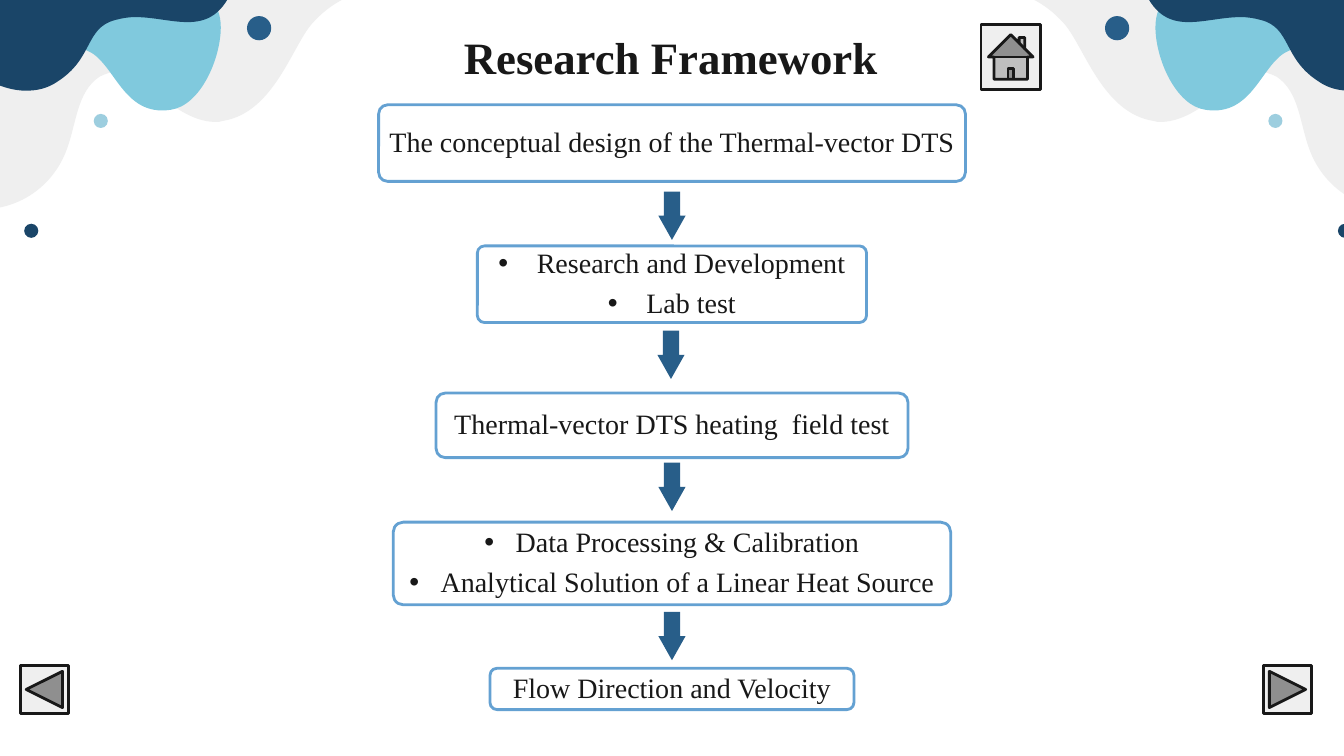
from dataclasses import dataclass

from lxml import etree
from pptx import Presentation
from pptx import util as u
from pptx.dml.color import RGBColor
from pptx.enum import shapes, text
from pptx.oxml.ns import qn


@dataclass(frozen=True)
class Theme:
    font: str = "Times New Roman"
    ink: str = "181818"
    white: str = "FFFFFF"
    border: str = "64A1D2"
    blue: str = "285E89"
    navy: str = "1A4568"
    aqua: str = "80C9DD"
    pale_blue: str = "9DCEDF"
    gray: str = "EFEFEF"
    title_size: int = 32
    body_size: int = 20
    line_width: int = 2


THEME = Theme()
PRESET = shapes.MSO_SHAPE
WIDTH, HEIGHT = 13.33, 7.5
CENTER = WIDTH / 2
MIRROR = 13.65

TITLE = "Research Framework"
STEPS = [
    {"top": 1.04, "width": 5.82, "height": 0.76, "radius": 0.09, "indent": 0,
     "lines": ["The conceptual design of the Thermal-vector DTS"]},
    {"top": 2.44, "width": 3.86, "height": 0.76, "radius": 0.07, "indent": 0.38,
     "lines": ["Research and Development", "Lab test"]},
    {"top": 3.9, "width": 4.68, "height": 0.64, "radius": 0.09, "indent": 0,
     "lines": ["Thermal-vector DTS heating  field test"]},
    {"top": 5.18, "width": 5.53, "height": 0.82, "radius": 0.1, "indent": 0.31,
     "lines": ["Data Processing & Calibration", "Analytical Solution of a Linear Heat Source"]},
    {"top": 6.63, "width": 3.61, "height": 0.41, "radius": 0.07, "indent": 0,
     "lines": ["Flow Direction and Velocity"]},
]
ARROWS = [(6.53, 1.9), (6.52, 3.28), (6.53, 4.59), (6.53, 6.07)]
ARROW_WIDTH, ARROW_HEIGHT = 0.27, 0.48
BUTTONS = [
    (PRESET.ACTION_BUTTON_FORWARD_OR_NEXT, 12.53, 6.6, 0.48, 0.48),
    (PRESET.ACTION_BUTTON_BACK_OR_PREVIOUS, 0.2, 6.6, 0.48, 0.48),
    (PRESET.ACTION_BUTTON_HOME, 9.73, 0.24, 0.59, 0.65),
]
WAVES = [
    (THEME.gray, (3.39, -0.17), [
        (3.57, -0.17, 3.72, -0.16, 3.71, -0.12), (3.7, -0.08, 3.46, -0.04, 3.41, -0.01),
        (3.29, 0.05, 3.19, 0.13, 3.1, 0.23), (2.9, 0.45, 2.72, 1.12, 2.21, 1.2),
        (2.19, 1.21, 2.16, 1.21, 2.14, 1.21), (1.8, 1.21, 1.5, 0.85, 1.37, 0.77),
        (1.31, 0.73, 1.24, 0.71, 1.18, 0.71), (1.11, 0.71, 1.05, 0.73, 0.99, 0.76),
        (0.76, 0.91, 0.76, 1.23, 0.66, 1.49), (0.54, 1.81, 0.26, 2.03, -0.07, 2.07),
        (-0.05, 1.38, -0.09, 0.69, -0.19, 0.01), (0.24, -0.06, 0.69, -0.08, 1.12, -0.09),
        (1.73, -0.11, 2.34, -0.14, 2.94, -0.15), (2.99, -0.16, 3.2, -0.17, 3.39, -0.17)]),
    (THEME.aqua, (0.01, 0.29), [
        (0.01, 0.36, 0.04, 0.43, 0.12, 0.49), (0.31, 0.63, 0.61, 0.41, 0.86, 0.5),
        (1.14, 0.61, 1.21, 1.16, 1.69, 1.09), (1.99, 1.05, 2.19, 0.58, 2.19, 0.27),
        (2.19, 0.21, 2.18, 0.15, 2.16, 0.1), (2.15, 0.09, 1.82, 0.01, 1.78, 0.01),
        (1.41, -0.02, 1.04, -0.02, 0.67, 0.02), (0.5, 0.03, 0.32, 0.05, 0.14, 0.07),
        (0.1, 0.08, 0.12, 0.08, 0.08, 0.12), (0.05, 0.14, 0.01, 0.21, 0.01, 0.29)]),
    (THEME.navy, (0.26, 0.9), [
        (0.01, 0.9, -0.19, 0.75, -0.19, 0.75), (-0.19, -0.17), (2.33, -0.17),
        (2.22, 0.15, 2.05, 0.22, 1.86, 0.22), (1.7, 0.22, 1.52, 0.17, 1.34, 0.17),
        (1.28, 0.17, 1.21, 0.18, 1.14, 0.2), (0.84, 0.28, 0.93, 0.58, 0.57, 0.81),
        (0.47, 0.88, 0.36, 0.9, 0.26, 0.9)]),
]
DOTS = [
    (THEME.blue, 2.45, 0.16, 0.24),
    (THEME.pale_blue, 0.93, 1.13, 0.14),
    (THEME.navy, 0.24, 2.22, 0.14),
]


def apply_format(target, values):
    for name, value in values.items():
        setattr(target, name, value)


def paint(shape, fill, line=None):
    shape.shadow.inherit = False
    shape.fill.solid()
    shape.fill.fore_color.rgb = RGBColor.from_string(fill)
    if line:
        shape.line.color.rgb = RGBColor.from_string(line)
        shape.line.width = u.Pt(THEME.line_width)
    else:
        shape.line.fill.background()


def add_preset(parent, preset, box, fill, line=None):
    shape = parent.shapes.add_shape(preset, *map(u.Inches, box))
    paint(shape, fill, line)
    return shape


def style_font(font, size, bold):
    apply_format(font, {"name": THEME.font, "size": u.Pt(size), "bold": bold})
    font.color.rgb = RGBColor.from_string(THEME.ink)


def to_points(numbers, mirrored):
    return [(u.Inches(MIRROR - x if mirrored else x), u.Inches(y))
            for x, y in zip(numbers[::2], numbers[1::2])]


def add_wave(parent, color, start, segments, mirrored):
    curves = [to_points(segment, mirrored) for segment in segments]
    builder = parent.shapes.build_freeform(*to_points(start, mirrored)[0])
    builder.add_line_segments([curve[-1] for curve in curves], close=True)
    wave = builder.convert_to_shape()
    paint(wave, color)
    for line, curve in zip(list(wave._element.iter(qn("a:lnTo"))), curves):
        if len(curve) == 3:
            bezier = etree.Element(qn("a:cubicBezTo"))
            for x, y in curve:
                etree.SubElement(bezier, qn("a:pt"), x=str(x - wave.left), y=str(y - wave.top))
            line.getparent().replace(line, bezier)


def add_corner(slide, mirrored):
    corner = slide.shapes.add_group_shape()
    for color, start, segments in WAVES:
        add_wave(corner, color, start, segments, mirrored)
    for color, left, top, size in DOTS:
        left = MIRROR - left - size if mirrored else left
        add_preset(corner, PRESET.OVAL, (left, top, size, size), color)
    slide.slide_layout.shapes._spTree.append(corner._element)


def add_title(slide):
    title = slide.shapes.title
    apply_format(title, {"left": u.Inches(4.5), "top": u.Inches(0.24),
                         "width": u.Inches(4.33), "height": u.Inches(0.64)})
    frame = title.text_frame
    frame.text = TITLE
    apply_format(frame, {"word_wrap": False, "auto_size": text.MSO_AUTO_SIZE.NONE,
                         "vertical_anchor": text.MSO_ANCHOR.TOP})
    paragraph = frame.paragraphs[0]
    paragraph.alignment = text.PP_ALIGN.LEFT
    style_font(paragraph.runs[0].font, THEME.title_size, True)


def add_bullet(paragraph, indent):
    properties = paragraph._p.get_or_add_pPr()
    properties.set("marL", str(u.Inches(indent)))
    properties.set("indent", str(-u.Inches(indent)))
    etree.SubElement(properties, qn("a:buFont"), typeface="Arial")
    etree.SubElement(properties, qn("a:buChar"), char="•")


def add_step(slide, step):
    box = (CENTER - step["width"] / 2, step["top"], step["width"], step["height"])
    shape = add_preset(slide, PRESET.ROUNDED_RECTANGLE, box, THEME.white, THEME.border)
    shape.adjustments[0] = step["radius"] / step["height"]
    frame = shape.text_frame
    apply_format(frame, {"word_wrap": True, "vertical_anchor": text.MSO_ANCHOR.MIDDLE,
                         "margin_left": u.Inches(0.07), "margin_right": u.Inches(0.07),
                         "margin_top": u.Inches(0.05), "margin_bottom": u.Inches(0.05)})
    frame.text = "\n".join(step["lines"])
    for paragraph in frame.paragraphs:
        apply_format(paragraph, {"alignment": text.PP_ALIGN.CENTER,
                                 "line_spacing": 0.9, "space_after": u.Pt(7)})
        style_font(paragraph.runs[0].font, THEME.body_size, False)
        if step["indent"]:
            add_bullet(paragraph, step["indent"])


def add_arrow(slide, left, top):
    box = (left, top, ARROW_WIDTH, ARROW_HEIGHT)
    arrow = add_preset(slide, PRESET.DOWN_ARROW, box, THEME.blue)
    arrow.adjustments[0] = 0.6
    arrow.adjustments[1] = ARROW_HEIGHT / 2 / ARROW_WIDTH


def main():
    presentation = Presentation()
    apply_format(presentation, {"slide_width": u.Inches(WIDTH), "slide_height": u.Inches(HEIGHT)})
    slide = presentation.slides.add_slide(presentation.slide_layouts[5])
    for mirrored in (False, True):
        add_corner(slide, mirrored)
    add_title(slide)
    for step in STEPS:
        add_step(slide, step)
    for left, top in ARROWS:
        add_arrow(slide, left, top)
    for preset, *box in BUTTONS:
        add_preset(slide, preset, box, THEME.gray, THEME.ink)
    presentation.save("out.pptx")


if __name__ == "__main__":
    main()
